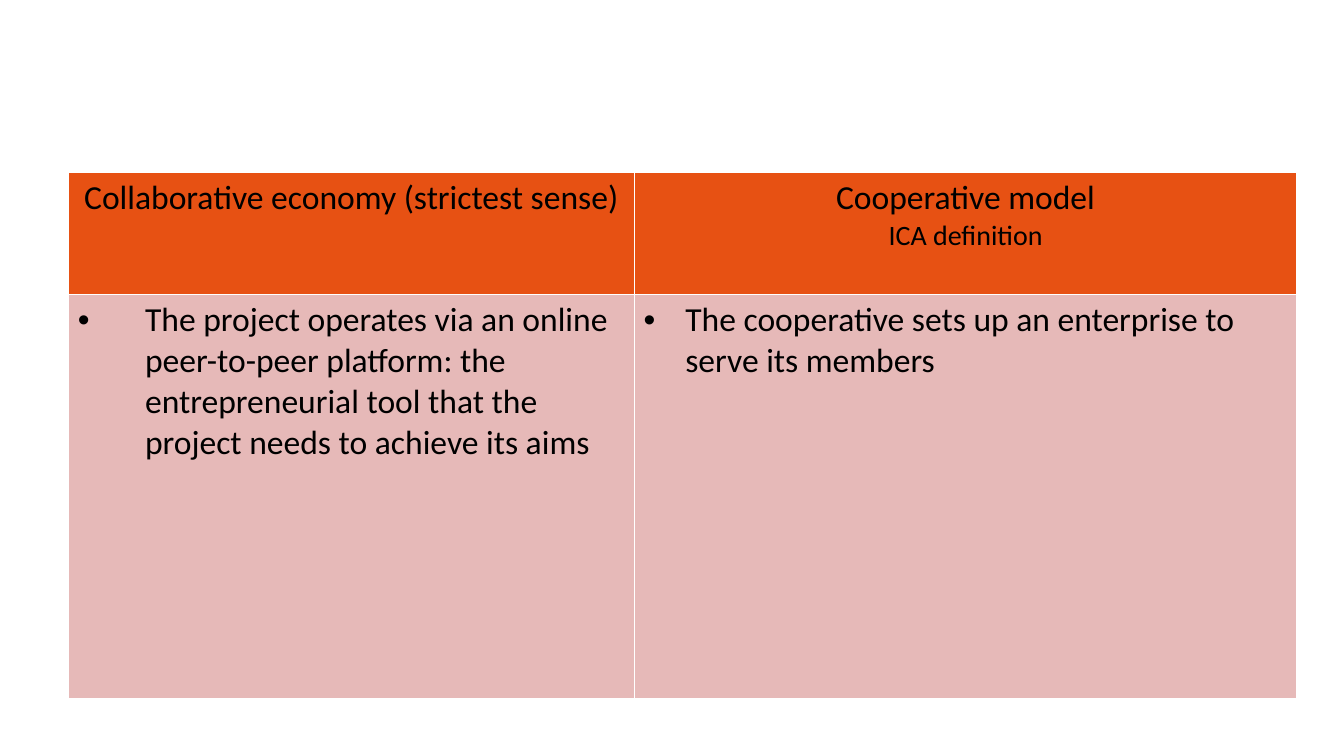
"""Build a slide comparing the collaborative economy with the cooperative model."""
from lxml.etree import SubElement
from pptx import Presentation
from pptx.dml.color import RGBColor
from pptx.enum.text import PP_ALIGN
from pptx.oxml.ns import qn
from pptx.util import Inches, Pt


def color(code):
    return RGBColor.from_string(code)


def border(cell, code, width):
    props = cell._tc.get_or_add_tcPr()
    for side in ("lnL", "lnR", "lnT", "lnB"):
        line = SubElement(props, qn("a:" + side), w=str(Pt(width)))
        fill = SubElement(line, qn("a:solidFill"))
        SubElement(fill, qn("a:srgbClr"), val=code)


deck = Presentation()
deck.slide_width = Inches(10)
deck.slide_height = Inches(10 * 9 / 16)
slide = deck.slides.add_slide(deck.slide_layouts[6])

widths = [4.21, 4.93]
heights = [0.91, 3.01]
fills = ["E75113", "E6B9B8"]
indents = [0.5, 0.31]
rows = [
    [
        [("Collaborative economy (strictest sense)", 18)],
        [("Cooperative model", 18), ("ICA definition", 15)],
    ],
    [
        [("The project operates via an online peer-to-peer platform: the "
          "entrepreneurial tool that the project needs to achieve its aims", 18)],
        [("The cooperative sets up an enterprise to serve its members", 18)],
    ],
]

frame = slide.shapes.add_table(2, 2, Inches(0.51), Inches(1.28),
                               Inches(sum(widths)), Inches(sum(heights)))
table = frame.table
table.first_row = False
table.horz_banding = False
for col, width in zip(table.columns, widths):
    col.width = Inches(width)
for row, height in zip(table.rows, heights):
    row.height = Inches(height)

for r, row in enumerate(rows):
    for c, lines in enumerate(row):
        cell = table.cell(r, c)
        cell.margin_left = cell.margin_right = Inches(0.07)
        cell.margin_top = cell.margin_bottom = Inches(0.04)
        border(cell, "FFFFFF", 1)
        cell.fill.solid()
        cell.fill.fore_color.rgb = color(fills[r])
        for i, (text, size) in enumerate(lines):
            box = cell.text_frame
            para = box.add_paragraph() if i else box.paragraphs[0]
            if r == 0:
                para.alignment = PP_ALIGN.CENTER
            else:
                props = para._p.get_or_add_pPr()
                indent = Inches(indents[c])
                props.set("marL", str(indent))
                props.set("indent", str(-indent))
                SubElement(props, qn("a:buFont"), typeface="Arial")
                SubElement(props, qn("a:buChar"), char="•")
            run = para.add_run()
            run.text = text
            run.font.name = "Calibri"
            run.font.size = Pt(size)
            run.font.bold = False
            run.font.color.rgb = color("000000")

deck.save("out.pptx")
